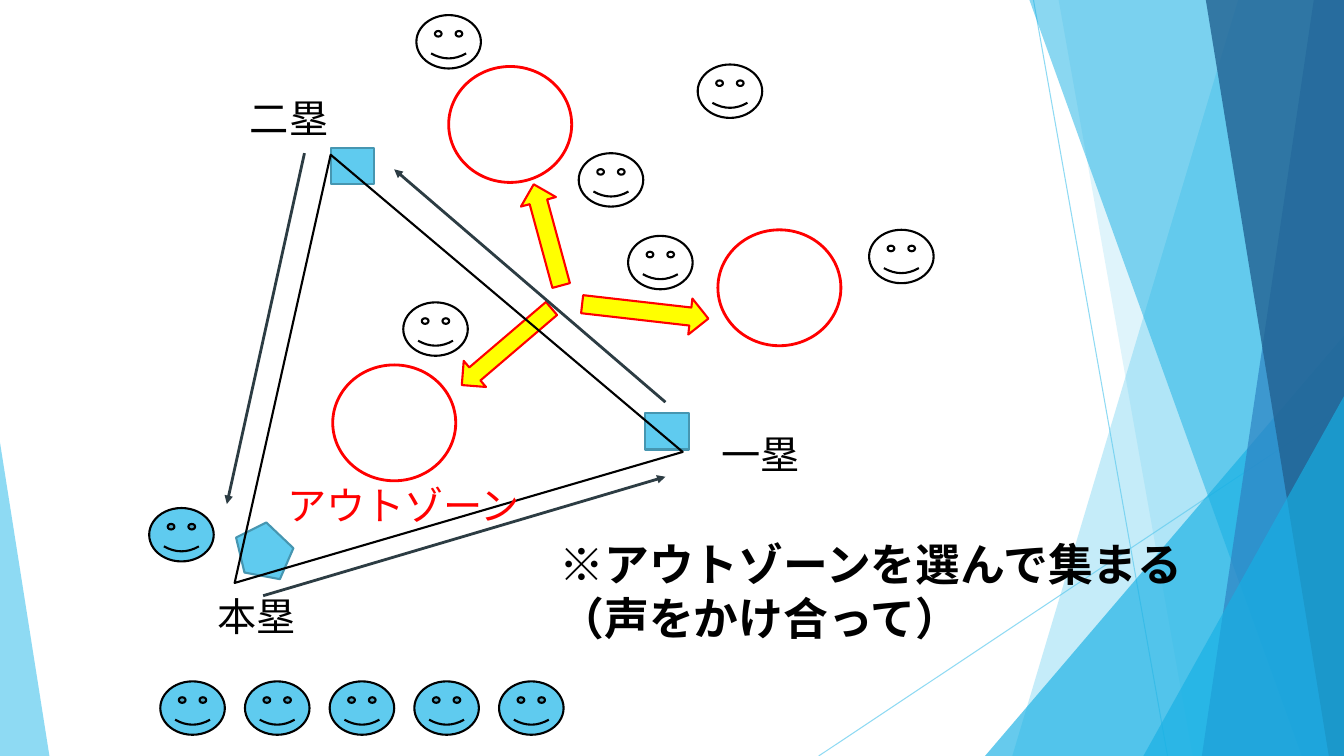
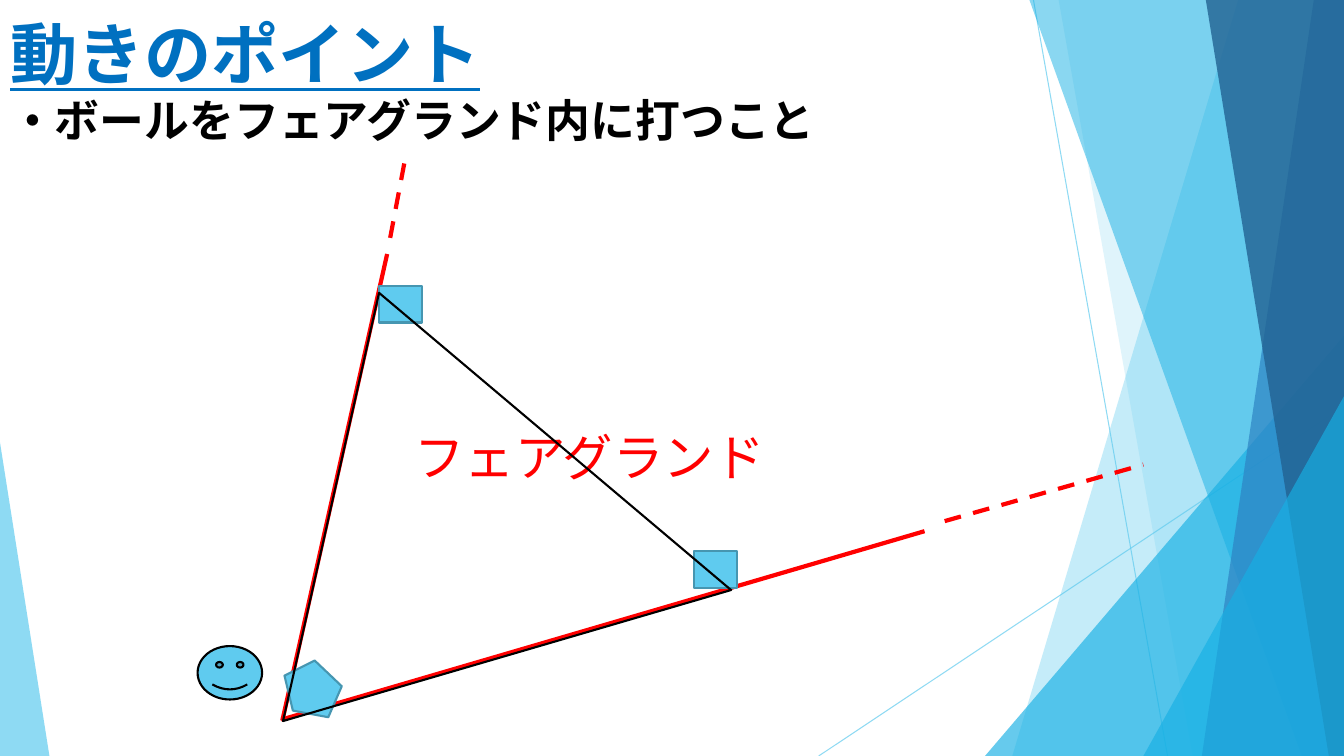
from dataclasses import dataclass

from lxml.etree import SubElement
from pptx import Presentation
from pptx.dml.color import RGBColor
from pptx.enum.dml import MSO_LINE
from pptx.enum.shapes import MSO_CONNECTOR, MSO_SHAPE
from pptx.enum.text import MSO_ANCHOR, MSO_AUTO_SIZE, PP_ALIGN
from pptx.oxml.ns import qn
from pptx.util import Inches, Pt


@dataclass(frozen=True)
class Theme:
    sky: str = "5FCBEF"
    cyan: str = "17B0E4"
    blue: str = "2E83C3"
    navy: str = "226292"
    base_edge: str = "4696B1"
    run: str = "2C3C43"
    title: str = "0070C0"
    red: str = "FF0000"
    yellow: str = "FFFF00"
    black: str = "000000"
    font: str = "Lato"
    note_font: str = "Arial"
    title_size: int = 48
    note_size: int = 32
    area_size: int = 36
    label_size: int = 28


theme = Theme()
WIDTH, HEIGHT = 13.33, 7.5
BAND = "band"
LINE = MSO_CONNECTOR.STRAIGHT
FACE = MSO_SHAPE.SMILEY_FACE
TRIANGLE = MSO_SHAPE.ISOSCELES_TRIANGLE


def draw(page, kind, numbers, fill=None, line=None, width=1.5, alpha=None,
         rotation=0, peak=None, dash=False, arrow=False):
    """Draw a line (from, to), a band (top x, bottom x) or a preset shape."""
    is_line = isinstance(kind, MSO_CONNECTOR)
    if kind == BAND:
        top, bottom = numbers
        builder = page.shapes.build_freeform(Inches(top), 0)
        corners = [(WIDTH, 0), (WIDTH, HEIGHT), (bottom, HEIGHT)]
        builder.add_line_segments([(Inches(x), Inches(y)) for x, y in corners])
        item = builder.convert_to_shape()
    else:
        add = page.shapes.add_connector if is_line else page.shapes.add_shape
        item = add(kind, *[Inches(number) for number in numbers])

    if line:
        item.line.color.rgb = RGBColor.from_string(line)
        item.line.width = Pt(width)
    else:
        item.line.fill.background()
    properties = item.element.spPr
    if is_line:
        if dash:
            item.line.dash_style = MSO_LINE.DASH
        if arrow:
            SubElement(properties.find(qn("a:ln")), qn("a:tailEnd"), type="triangle")
        SubElement(properties, qn("a:effectLst"))
    else:
        item.shadow.inherit = False
        item.rotation = rotation
        if fill:
            item.fill.solid()
            item.fill.fore_color.rgb = RGBColor.from_string(fill)
        else:
            item.fill.background()
        if peak is not None:
            item.adjustments[0] = peak
    if alpha:
        for colour in properties.iter(qn("a:srgbClr")):
            SubElement(colour, qn("a:alpha"), val=str(alpha * 1000))
    return item


def write(page, text, place, size, color, font=theme.font, bold=False, wrap=False):
    """Add a text box with one format throughout."""
    box = page.shapes.add_textbox(*[Inches(number) for number in place])
    frame = box.text_frame
    frame.text = text
    frame.word_wrap = wrap
    frame.auto_size = MSO_AUTO_SIZE.SHAPE_TO_FIT_TEXT
    for para in frame.paragraphs:
        for span in para.runs:
            span.font.name = font
            span.font.size = Pt(size)
            span.font.bold = bold
            span.font.color.rgb = RGBColor.from_string(color)


deck = Presentation()
deck.slide_width = Inches(WIDTH)
deck.slide_height = Inches(HEIGHT)
zones_page = deck.slides.add_slide(deck.slide_layouts[6])
points_page = deck.slides.add_slide(deck.slide_layouts[5])

# Shared backdrop, placed on the slide master
backdrop = [
    draw(zones_page, LINE, ends, line=theme.sky, width=0.75, alpha=70)
    for ends in [(10.25, 0, 11.58, HEIGHT), (WIDTH, 4.03, 8.12, HEIGHT)]
]
for kind, numbers, color, alpha, peak in [
    (BAND, (12.28, 10.04), theme.sky, 36, None),
    (BAND, (10.5, 11.83), theme.sky, 20, None),
    (TRIANGLE, (9.77, 3.33, 3.56, 4.17), theme.cyan, 66, 1),
    (BAND, (10.21, 12.91), theme.cyan, 50, None),
    (BAND, (13.03, 11.92), theme.blue, 70, None),
    (BAND, (11.96, 13.18), theme.navy, 80, None),
    (TRIANGLE, (11.34, 3.93, 1.99, 3.57), theme.cyan, 66, 1),
    (TRIANGLE, (0, 4.39, 0.49, 3.11), theme.sky, 70, 0),
]:
    backdrop.append(draw(zones_page, kind, numbers, color, alpha=alpha, peak=peak))
master_tree = deck.slide_master.element.cSld.spTree
for number, item in enumerate(backdrop, start=100):
    item.element.xpath(".//p:cNvPr")[0].set("id", str(number))
    master_tree.append(item.element)

# Slide 1: block arrows towards the out zones
for place, rotation in [
    ((5.77, 2.91, 1.26, 0.36), 6.5),
    ((4.44, 3.27, 1.17, 0.34), 139.5),
    ((4.91, 2.15, 1.04, 0.36), 254.8),
]:
    draw(zones_page, MSO_SHAPE.RIGHT_ARROW, place, theme.yellow, theme.red,
         rotation=rotation)

# Slide 2: title with its point
title = points_page.shapes.title
title.left, title.top = 0, Inches(0.07)
title.width, title.height = Inches(12.59), Inches(7.43)
frame = title.text_frame
frame.text = "動きのポイント\v・ボールをフェアグランド内に打つこと"
frame.auto_size = MSO_AUTO_SIZE.NONE
frame.vertical_anchor = MSO_ANCHOR.TOP
para = frame.paragraphs[0]
para.alignment = PP_ALIGN.LEFT
for span, size, color, underline in zip(
    para.runs,
    (theme.title_size, theme.note_size),
    (theme.title, theme.black),
    (True, False),
):
    span.font.name = theme.font
    span.font.size = Pt(size)
    span.font.bold = True
    span.font.underline = underline
    span.font.color.rgb = RGBColor.from_string(color)

# Slide 2: foul lines and the fair ground
for ends, dash in [
    ((2.8, 7.15, 3.84, 2.52), False),
    ((2.79, 7.14, 9.17, 5.27), False),
    ((9.37, 5.17, 11.34, 4.61), True),
    ((3.87, 2.36, 4.01, 1.62), True),
]:
    draw(points_page, LINE, ends, line=theme.red, width=3, dash=dash)
write(points_page, "フェアグランド", (4.01, 4.18, 4.18, 0.71), theme.area_size,
      theme.red, wrap=True)

# Both slides: bases, batter and base paths
for page, right, down in [(zones_page, 0, 0), (points_page, 0.48, 1.37)]:
    for kind, (left, top, width, height), fill, edge, rotation, peak in [
        (MSO_SHAPE.RECTANGLE, (3.28, 1.47, 0.43, 0.36), theme.sky, theme.base_edge, 0, None),
        (MSO_SHAPE.RECTANGLE, (6.4, 4.1, 0.43, 0.36), theme.sky, theme.base_edge, 0, None),
        (MSO_SHAPE.REGULAR_PENTAGON, (2.3, 5.24, 0.6, 0.51), theme.sky, theme.base_edge, 223.5, None),
        (FACE, (1.48, 5.04, 0.64, 0.53), theme.sky, theme.black, 0, None),
        (TRIANGLE, (1.7, 1.4, 4.63, 3.81), None, theme.black, 343.7, 0.455),
    ]:
        draw(page, kind, (left + right, top + down, width, height), fill, edge,
             rotation=rotation, peak=peak)

# Slide 1: fielders and the waiting batters
fielders = [(4, 3), (5.74, 1.52), (8.62, 2.28), (4.13, 0.15), (6.23, 2.34), (6.92, 0.64)]
for left, top in fielders:
    draw(zones_page, FACE, (left, top, 0.64, 0.53), line=theme.black)
for number in range(5):
    draw(zones_page, FACE, (1.59 + 0.84 * number, 6.76, 0.64, 0.53), theme.sky,
         theme.black)

# Slide 1: out zones, labels and running directions
for left, top in [(3.3, 3.62), (4.45, 0.66), (7.12, 2.28)]:
    draw(zones_page, MSO_SHAPE.OVAL, (left, top, 1.22, 1.15), line=theme.red, width=2)
for text, left, top, width, color in [
    ("一塁", 7.06, 4.22, 0.99, theme.black),
    ("本塁", 2.06, 5.83, 0.99, theme.black),
    ("二塁", 2.38, 0.89, 0.99, theme.black),
    ("アウトゾーン", 2.75, 4.73, 2.56, theme.red),
]:
    write(zones_page, text, (left, top, width, 0.57), theme.label_size, color)
write(zones_page, "※アウトゾーンを選んで集まる\n（声をかけ合って）",
      (5.45, 5.28, 6.48, 1.18), theme.note_size, theme.black, theme.note_font, bold=True)
for ends in [(2.61, 5.91, 6.6, 4.73), (3.02, 1.52, 2.25, 5), (6.6, 3.99, 3.91, 1.68)]:
    draw(zones_page, LINE, ends, line=theme.run, width=2, arrow=True)

deck.save("out.pptx")
